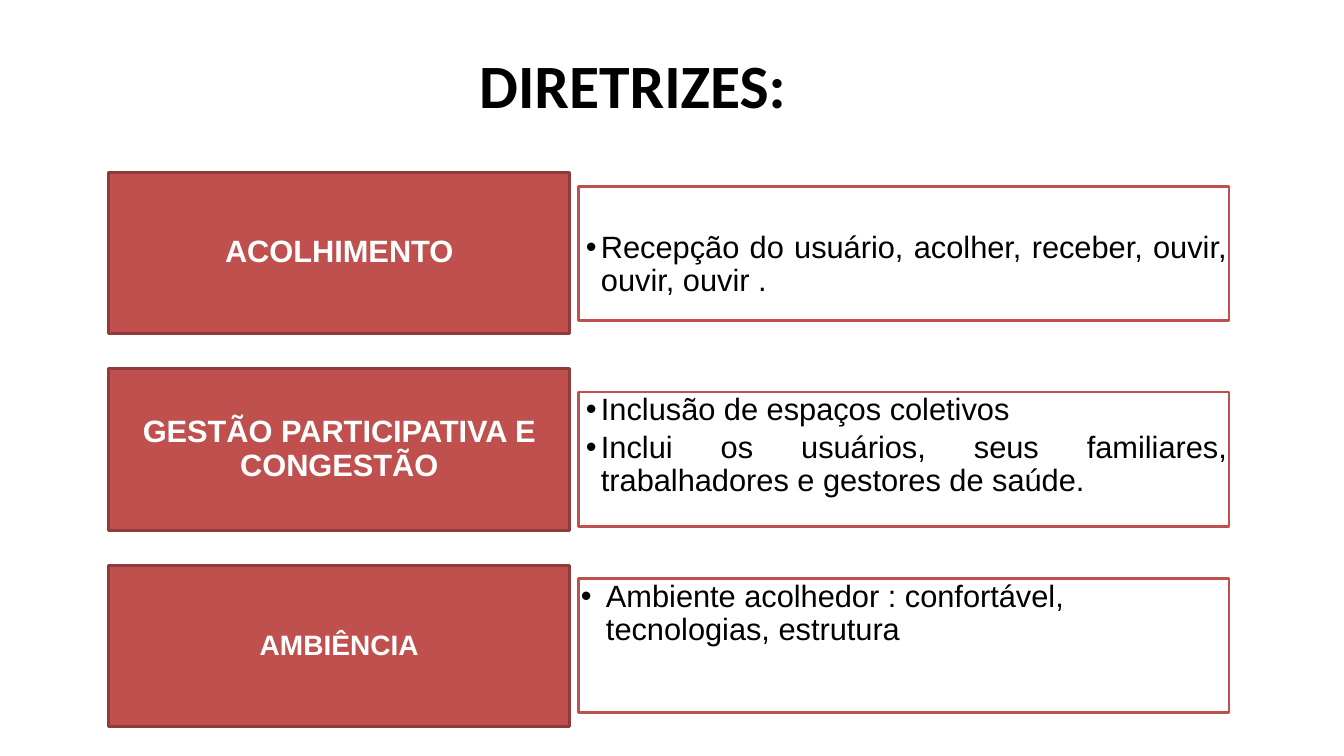
from dataclasses import dataclass

from lxml.etree import SubElement
from pptx import Presentation
from pptx.dml.color import RGBColor
from pptx.enum.shapes import MSO_SHAPE
from pptx.enum.text import MSO_ANCHOR, PP_ALIGN
from pptx.oxml.ns import qn
from pptx.util import Inches, Pt

RED = RGBColor(0xC0, 0x50, 0x4D)
DARK_RED = RGBColor(0x8E, 0x3B, 0x39)
WHITE = RGBColor(0xFF, 0xFF, 0xFF)
BLACK = RGBColor(0, 0, 0)

FIRST_TOP, ROW_STEP = 1.71, 1.95
LABEL_LEFT, LABEL_W, LABEL_H = 1.08, 4.57, 1.6
DETAIL_LEFT, DETAIL_W, DETAIL_H = 5.74, 6.45, 1.33


@dataclass
class Guideline:
    label: str
    bullets: list[str]
    detail_drop: float  # offset of the detail box below the label's top
    label_size: int = 22
    text_top: float = 0.02
    align: PP_ALIGN = PP_ALIGN.JUSTIFY
    indent: float = 0.2
    hanging: float = 0.15


GUIDELINES = [
    Guideline("ACOLHIMENTO",
              ["Recepção do usuário, acolher, receber, ouvir, ouvir, ouvir . "],
              0.14, text_top=0.45),
    Guideline("GESTÃO PARTICIPATIVA E CONGESTÃO",
              ["Inclusão de espaços coletivos",
               "Inclui os usuários, seus familiares, trabalhadores e gestores de saúde."],
              0.23),
    Guideline("AMBIÊNCIA",
              ["Ambiente acolhedor : confortável, tecnologias, estrutura"],
              0.13, label_size=20, align=PP_ALIGN.LEFT, indent=0.25, hanging=0.25),
]


def set_margins(tf, left: float, top: float, right: float, bottom: float) -> None:
    tf.margin_left, tf.margin_top = Inches(left), Inches(top)
    tf.margin_right, tf.margin_bottom = Inches(right), Inches(bottom)
    tf.word_wrap = True


def format_runs(p, size: int, color: RGBColor, bold: bool = False,
                name: str = "Arial") -> None:
    for r in p.runs:
        r.font.name, r.font.size, r.font.bold = name, Pt(size), bold
        r.font.color.rgb = color


def add_box(slide, left: float, top: float, width: float, height: float,
            fill: RGBColor, line: RGBColor):
    sp = slide.shapes.add_shape(MSO_SHAPE.RECTANGLE, Inches(left), Inches(top),
                                Inches(width), Inches(height))
    sp.shadow.inherit = False
    sp.fill.solid()
    sp.fill.fore_color.rgb = fill
    sp.line.color.rgb = line
    sp.line.width = Pt(2)
    return sp


def add_bullet(p, indent: float, hanging: float) -> None:
    pPr = p._p.get_or_add_pPr()
    pPr.set("marL", str(Inches(indent)))
    pPr.set("indent", str(-Inches(hanging)))
    color = SubElement(pPr, qn("a:buClr"))
    SubElement(color, qn("a:srgbClr"), val=str(BLACK))
    SubElement(pPr, qn("a:buFont"), typeface="Arial")
    SubElement(pPr, qn("a:buChar"), char="•")


def add_detail(slide, item: Guideline, top: float) -> None:
    sp = add_box(slide, DETAIL_LEFT, top, DETAIL_W, DETAIL_H, WHITE, RED)
    tf = sp.text_frame
    set_margins(tf, 0.02, item.text_top, 0.02, 0.02)
    tf.vertical_anchor = MSO_ANCHOR.TOP
    for i, text in enumerate(item.bullets):
        p = tf.add_paragraph() if i else tf.paragraphs[0]
        p.text = text
        p.alignment, p.level, p.line_spacing = item.align, 1, 0.9
        p.space_before = Pt(3.3 if i else 0)
        add_bullet(p, item.indent, item.hanging)
        format_runs(p, 22, BLACK)


def add_label(slide, item: Guideline, top: float) -> None:
    sp = add_box(slide, LABEL_LEFT, top, LABEL_W, LABEL_H, RED, DARK_RED)
    tf = sp.text_frame
    set_margins(tf, 0.09, 0.05, 0.09, 0.05)
    tf.vertical_anchor = MSO_ANCHOR.MIDDLE
    tf.text = item.label
    p = tf.paragraphs[0]
    p.alignment, p.line_spacing = PP_ALIGN.CENTER, 0.9
    format_runs(p, item.label_size, WHITE, bold=True)


def add_title(slide) -> None:
    sp = slide.shapes.add_textbox(Inches(0.68), Inches(0.21), Inches(11.33), Inches(1.25))
    tf = sp.text_frame
    set_margins(tf, 0.1, 0.05, 0.1, 0.05)
    tf.vertical_anchor = MSO_ANCHOR.MIDDLE
    tf.text = "DIRETRIZES: "
    p = tf.paragraphs[0]
    p.alignment = PP_ALIGN.CENTER
    format_runs(p, 44, BLACK, bold=True, name="Calibri")


def main() -> None:
    prs = Presentation()
    prs.slide_width, prs.slide_height = Inches(13.33), Inches(7.5)
    slide = prs.slides.add_slide(prs.slide_layouts[6])

    # Guideline rows: detail box on the right, label on the left
    for i, item in enumerate(GUIDELINES):
        top = FIRST_TOP + i * ROW_STEP
        add_detail(slide, item, top + item.detail_drop)
        add_label(slide, item, top)

    # Heading
    add_title(slide)
    prs.save("out.pptx")


if __name__ == "__main__":
    main()
